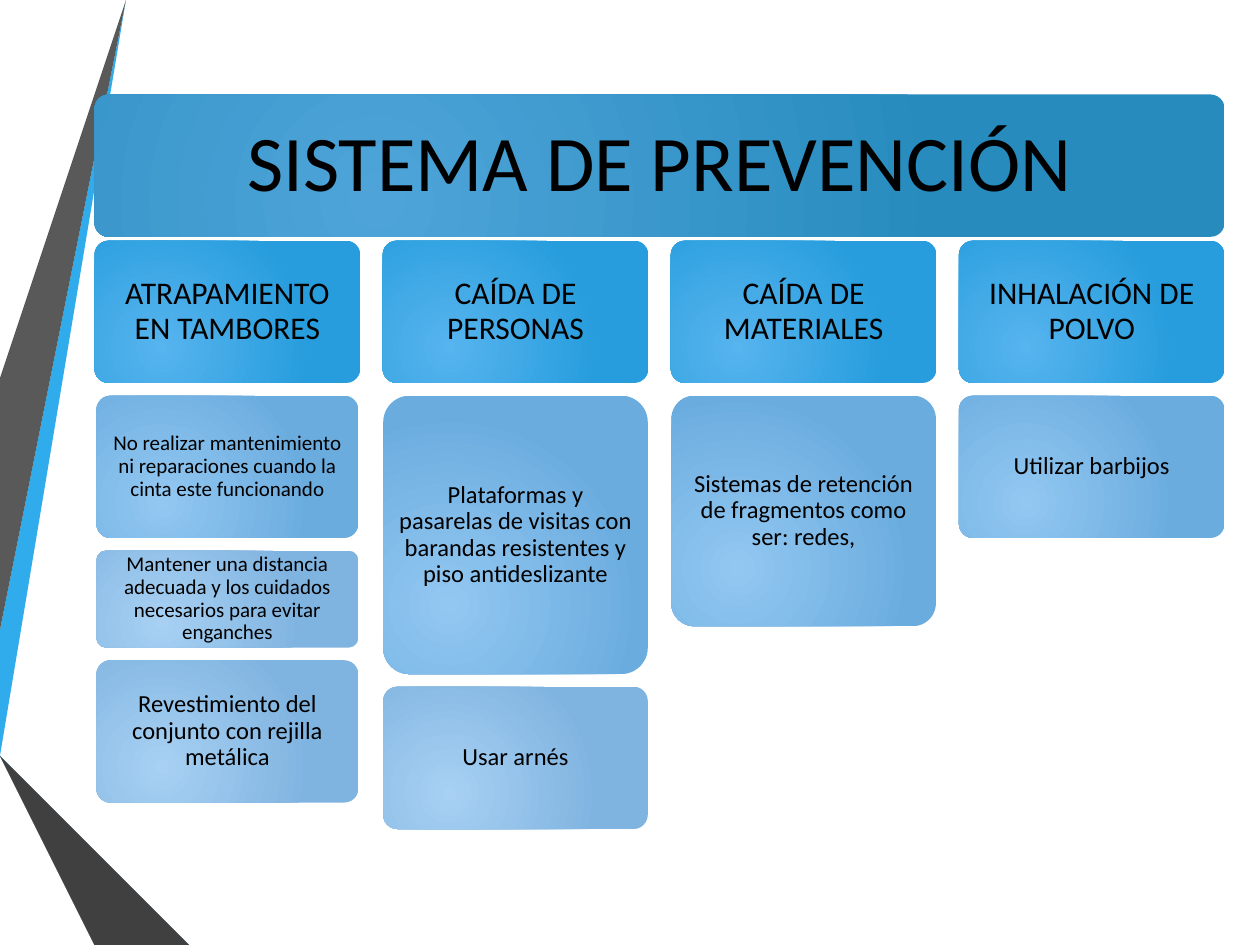
import pptx
import pptx.util
import pptx.dml.color
import pptx.enum.shapes
import pptx.enum.text
from lxml import etree

Inch = pptx.util.Inches
Pt = pptx.util.Pt
Rgb = pptx.dml.color.RGBColor.from_string

THEME = {
    "font": "Calibri", "ink": "000000",
    "title": 45, "head": 18, "body": 14, "small": 12,
    "banner": ("4EA4D9", "278BBE"),
    # one tone for each level of a column: heading, first card, later cards
    "tones": [("56B4EE", "279DDD"), ("92C7F1", "6BACDF"), ("A7D0F3", "80B4E0")],
}

TITLE = "SISTEMA DE PREVENCIÓN"

# heading, card width, cards as (text, size, height)
ROW = 1.13
COLUMNS = [
    ("ATRAPAMIENTO EN TAMBORES", 2.08, [
        ("No realizar mantenimiento ni reparaciones cuando la cinta este funcionando", "small", ROW),
        ("Mantener una distancia adecuada y los cuidados necesarios para evitar enganches", "small", 0.77),
        ("Revestimiento del conjunto con rejilla metálica", "body", ROW)]),
    ("CAÍDA DE PERSONAS", 2.1, [
        ("Plataformas y pasarelas de visitas con barandas resistentes y piso antideslizante", "body", 2.21),
        ("Usar arnés", "body", ROW)]),
    ("CAÍDA DE MATERIALES", 2.1, [
        ("Sistemas de retención de fragmentos como ser: redes,", "body", 1.83)]),
    ("INHALACIÓN DE POLVO", 2.11, [
        ("Utilizar barbijos", "body", ROW)]),
]

# side ribbons: colour, corner points
RIBBONS = [
    ("30ACEC", [(0, 5.44), (0, 5.75), (0.22, 5.79), (1.17, 0), (0.89, 0)]),
    ("595959", [(0.83, 0), (0.55, 0), (0, 3.36), (0, 5.06)]),
    ("262626", [(0, 6.19), (0, 6.21), (0.93, 7.5), (0.99, 7.5)]),
    ("0C5A82", [(0, 5.79), (0, 5.8), (1.56, 7.5), (1.63, 7.5)]),
    ("1287C3", [(0, 5.79), (1.63, 7.5), (2.33, 7.5), (0.22, 5.79), (0, 5.75)]),
    ("404040", [(0, 6.19), (0.99, 7.5), (1.51, 7.5), (0, 5.86)]),
]

LEFT, TOP, WIDE = 0.75, 0.75, 8.97
HEAD_TOP, HEAD_WIDE = 1.91, 2.11
PITCH = (WIDE - HEAD_WIDE) / (len(COLUMNS) - 1)
GAP = 0.1


def write(shape, text, size):
    frame = shape.text_frame
    frame.word_wrap = True
    frame.auto_size = pptx.enum.text.MSO_AUTO_SIZE.NONE
    frame.vertical_anchor = pptx.enum.text.MSO_ANCHOR.MIDDLE
    inset = Pt(size * 0.3)
    frame.margin_left = frame.margin_right = inset
    frame.margin_top = frame.margin_bottom = inset
    para = frame.paragraphs[0]
    para.alignment = pptx.enum.text.PP_ALIGN.CENTER
    para.line_spacing = 0.9
    run = para.add_run()
    run.text = text
    run.font.size = Pt(size)
    run.font.name = THEME["font"]
    run.font.color.rgb = Rgb(THEME["ink"])


def glow(shape, tones):
    """Fill with a radial gradient, light at the lower left."""
    shape.fill.gradient()
    for stop, tone in zip(shape.fill.gradient_stops, tones):
        stop.color.rgb = Rgb(tone)
    grad = shape.element.spPr.find(pptx.oxml.ns.qn("a:gradFill"))
    line = grad.find(pptx.oxml.ns.qn("a:lin"))
    ring = etree.Element(pptx.oxml.ns.qn("a:path"), {"path": "circle"})
    etree.SubElement(ring, pptx.oxml.ns.qn("a:fillToRect"),
                     l="50000", t="100000", r="100000", b="50000")
    grad.replace(line, ring)


def add_card(slide, left, top, width, height, tones):
    kind = pptx.enum.shapes.MSO_SHAPE.ROUNDED_RECTANGLE
    card = slide.shapes.add_shape(kind, Inch(left), Inch(top), Inch(width), Inch(height))
    card.adjustments[0] = 0.1
    card.shadow.inherit = False
    card.line.fill.background()
    glow(card, tones)
    return card


def add_ribbon(slide, color, points):
    pen = slide.shapes.build_freeform(*points[0], scale=Inch(1))
    pen.add_line_segments(points[1:], close=True)
    ribbon = pen.convert_to_shape()
    ribbon.shadow.inherit = False
    ribbon.line.fill.background()
    ribbon.fill.solid()
    ribbon.fill.fore_color.rgb = Rgb(color)


def add_banner(slide):
    banner = add_card(slide, LEFT, TOP, WIDE, ROW, THEME["banner"])
    title = slide.shapes.title
    edge = Inch(0.03)
    title.left, title.top = banner.left + edge, banner.top + edge
    title.width, title.height = banner.width - 2 * edge, banner.height - 2 * edge
    write(title, TITLE, THEME["title"])
    banner.element.addnext(title.element)


def add_column(slide, index, head, width, cards):
    middle = LEFT + HEAD_WIDE / 2 + index * PITCH
    top = HEAD_TOP
    stack = [(head, "head", ROW)] + cards
    for level, (text, size, height) in enumerate(stack):
        wide = width if level else HEAD_WIDE
        tones = THEME["tones"][min(level, 2)]
        card = add_card(slide, middle - wide / 2, top, wide, height, tones)
        write(card, text, THEME[size])
        top += height + GAP


def main():
    deck = pptx.Presentation()
    deck.slide_width, deck.slide_height = Inch(10), Inch(7.5)
    slide = deck.slides.add_slide(deck.slide_layouts[5])
    for color, points in RIBBONS:
        add_ribbon(slide, color, points)
    add_banner(slide)
    for index, column in enumerate(COLUMNS):
        add_column(slide, index, *column)
    deck.save("out.pptx")


if __name__ == "__main__":
    main()
